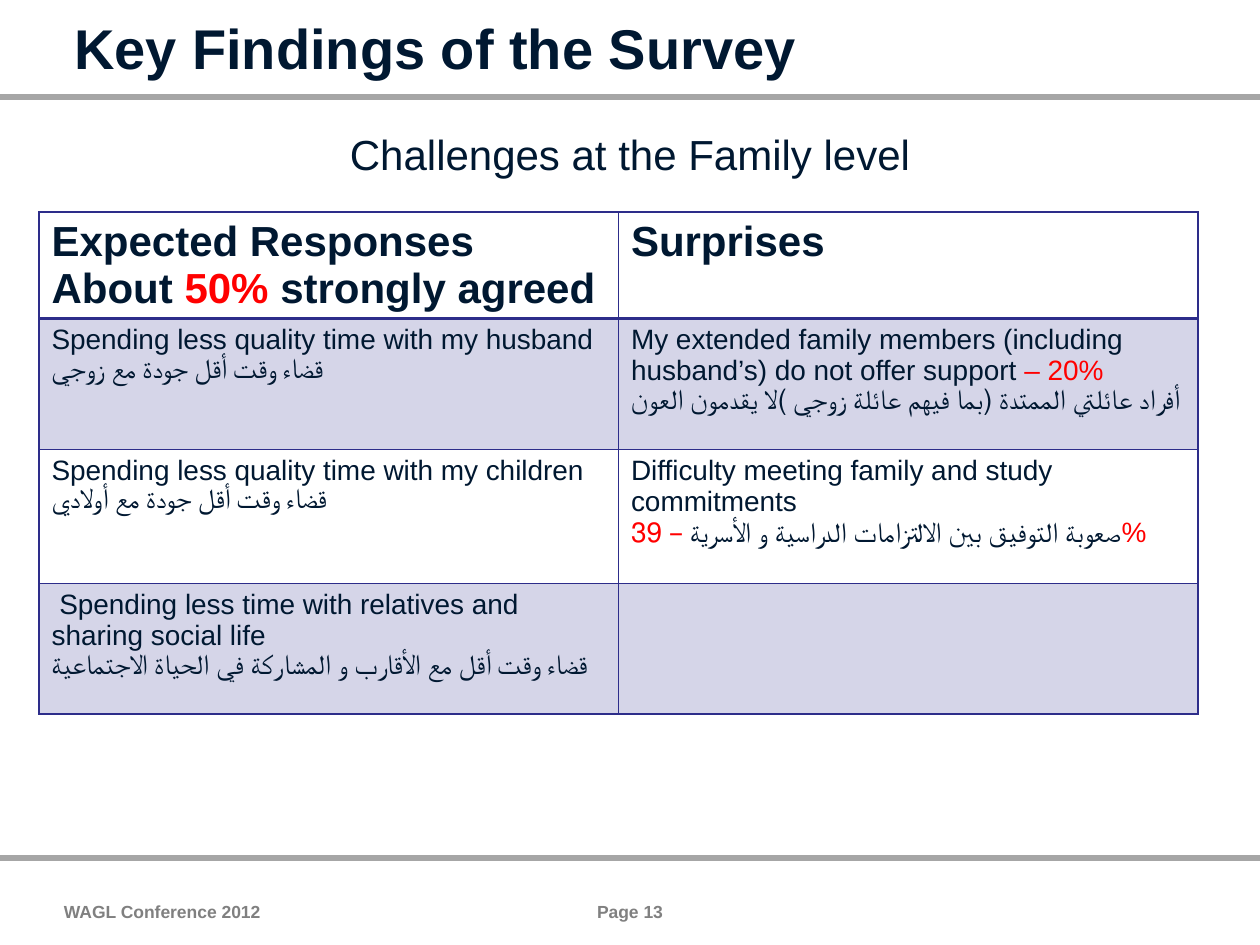
from dataclasses import dataclass
from typing import NamedTuple

from lxml import etree
from pptx import Presentation, util as u
from pptx.dml.color import RGBColor
from pptx.enum import shapes, text
from pptx.oxml import ns

SCALE = 914400 / 126
COLORS = {"ink": "001831", "red": "FF0000", "gray": "808080",
          "rule": "A6A6A6", "edge": "2D2D8A", "band": "D5D5E8"}
LEFT, MID = text.PP_ALIGN.LEFT, text.PP_ALIGN.CENTER


class Run(NamedTuple):
    text: str
    color: str = "ink"


class Box(NamedTuple):
    left: int
    top: int
    width: int
    height: int


class Style(NamedTuple):
    size: int
    bold: bool = False
    align: text.PP_ALIGN = LEFT


@dataclass
class Label:
    box: Box
    run: Run
    style: Style


@dataclass
class Row:
    height: int
    style: Style
    cells: list[list[list[Run]]]


HEAD = Style(24, True)
CELL = Style(16)
ROWS = [
    Row(106, HEAD, [
        [[Run("Expected Responses")],
         [Run("About "), Run("50%", "red"), Run(" strongly agreed")]],
        [[Run("Surprises")]]]),
    Row(131, CELL, [
        [[Run("Spending less quality time with my husband")],
         [Run("قضاء وقت أقل جودة مع زوجي")]],
        [[Run("My extended family members (including husband’s) do not offer support "),
          Run("– 20%", "red")],
         [Run("أفراد عائلتي الممتدة (بما فيهم عائلة زوجي) لا يقدمون العون")]]]),
    Row(134, CELL, [
        [[Run("Spending less quality time with my children")],
         [Run("قضاء وقت أقل جودة مع أولادي")]],
        [[Run("Difficulty meeting family and study commitments")],
         [Run("صعوبة التوفيق بين الالتزامات الدراسية و الأسرية "),
          Run("– 39%", "red")]]]),
    Row(131, CELL, [
        [[Run(" Spending less time with relatives and sharing social life")],
         [Run("قضاء وقت أقل مع الأقارب و المشاركة في الحياة الاجتماعية")]],
        []]),
]
LABELS = [
    Label(Box(64, 890, 400, 42), Run("WAGL Conference 2012", "gray"), Style(10, True)),
    Label(Box(499, 890, 262, 42), Run("Page 13", "gray"), Style(10, True, MID)),
]
RULES = [97, 858]


def px(n: int) -> int:
    return u.Emu(round(n * SCALE))


def rgb(name: str) -> RGBColor:
    return RGBColor.from_string(COLORS[name])


def write(frame, paras: list[list[Run]], style: Style) -> None:
    for i, runs in enumerate(paras):
        para = frame.add_paragraph() if i else frame.paragraphs[0]
        para.alignment = style.align
        para.space_before = u.Pt(0)
        for item in runs:
            run = para.add_run()
            run.text = item.text
            font = run.font
            font.name, font.size, font.bold = "Arial", u.Pt(style.size), style.bold
            font.color.rgb = rgb(item.color)


def place(shape, box: Box, inset: int, anchor) -> None:
    """Move a text shape and fix its margins, wrapping and anchor."""
    shape.left, shape.top, shape.width, shape.height = map(px, box)
    frame = shape.text_frame
    frame.word_wrap = True
    frame.auto_size = text.MSO_AUTO_SIZE.NONE
    frame.margin_left = frame.margin_right = px(inset)
    frame.margin_top = frame.margin_bottom = 0
    frame.vertical_anchor = anchor


def draw_rule(slide, y: int) -> None:
    line = slide.shapes.add_connector(
        shapes.MSO_CONNECTOR.STRAIGHT, 0, px(y), px(1260), px(y))
    line.line.color.rgb = rgb("rule")
    line.line.width = u.Pt(3)
    etree.SubElement(line._element.spPr, ns.qn("a:effectLst"))


def draw_label(slide, label: Label) -> None:
    box = slide.shapes.add_textbox(*map(px, label.box))
    place(box, label.box, 0, text.MSO_ANCHOR.MIDDLE)
    write(box.text_frame, [[label.run]], label.style)


def edge(cell, side: str, points: int) -> None:
    """Add one cell border; side is L, R, T or B."""
    line = etree.SubElement(cell._tc.get_or_add_tcPr(), ns.qn(f"a:ln{side}"),
                            w=str(u.Pt(points)))
    fill = etree.SubElement(line, ns.qn("a:solidFill"))
    etree.SubElement(fill, ns.qn("a:srgbClr"), val=COLORS["edge"])


def draw_table(slide, left: int, top: int, width: int) -> None:
    high = sum(row.height for row in ROWS)
    table = slide.shapes.add_table(
        len(ROWS), 2, px(left), px(top), px(width), px(high)).table
    table.first_row = table.horz_banding = False
    for r, row in enumerate(ROWS):
        table.rows[r].height = px(row.height)
        for c, paras in enumerate(row.cells):
            cell = table.cell(r, c)
            write(cell.text_frame, paras, row.style)
            for side in "LRTB":
                thick = (r, side) in ((0, "B"), (1, "T"))
                edge(cell, side, 2 if thick else 1)
            if r % 2:
                cell.fill.solid()
                cell.fill.fore_color.rgb = rgb("band")
            else:
                cell.fill.background()


def main() -> None:
    deck = Presentation()
    deck.slide_width, deck.slide_height = u.Inches(10), u.Inches(7.5)
    slide = deck.slides.add_slide(deck.slide_layouts[1])

    title, body = slide.placeholders
    place(title, Box(64, 13, 1132, 68), 10, text.MSO_ANCHOR.MIDDLE)
    write(title.text_frame, [[Run("Key Findings of the Survey")]], Style(32, True))

    place(body, Box(64, 129, 1132, 709), 10, text.MSO_ANCHOR.TOP)
    props = body.text_frame.paragraphs[0]._p.get_or_add_pPr()
    props.set("marL", "0")
    props.set("indent", "0")
    etree.SubElement(props, ns.qn("a:buNone"))
    write(body.text_frame, [[Run("Challenges at the Family level")]],
          Style(24, align=MID))

    for y in RULES:
        draw_rule(slide, y)
    for label in LABELS:
        draw_label(slide, label)
    draw_table(slide, 39, 212, 1159)
    deck.save("out.pptx")


if __name__ == "__main__":
    main()
